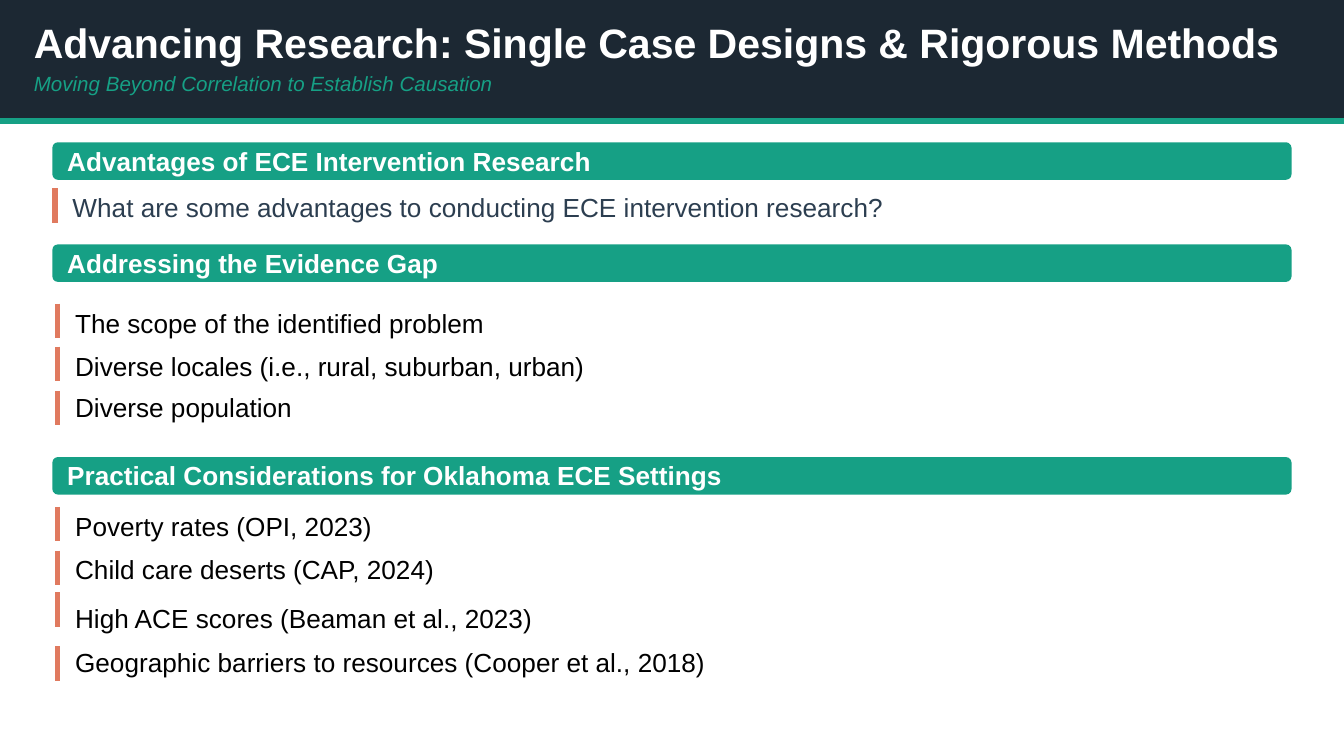
from dataclasses import dataclass

from lxml.etree import SubElement
from pptx import Presentation
from pptx.dml.color import RGBColor
from pptx.enum.shapes import MSO_CONNECTOR as Connector, MSO_SHAPE as Shape
from pptx.oxml.ns import qn
from pptx.util import Cm, Pt


@dataclass(frozen=True)
class Theme:
    font: str = "Arial"
    navy: str = "1C2833"
    green: str = "16A085"
    coral: str = "E07A5F"
    slate: str = "2C3E50"
    black: str = "000000"
    white: str = "FFFFFF"
    title_size: int = 22
    subtitle_size: int = 11
    body_size: int = 14
    line_width: int = 3


@dataclass(frozen=True)
class Item:
    """One marked line of text; positions are in centimetres."""
    text: str
    mark_top: float
    text_top: float
    color: str
    mark_left: float = 1.09


@dataclass(frozen=True)
class Section:
    heading: str
    top: float
    items: tuple[Item, ...]


THEME = Theme()
PAGE_WIDTH, PAGE_HEIGHT = 25.4, 14.29
HEADER_HEIGHT, RULE_TOP = 2.34, 2.29
BAR_LEFT, BAR_WIDTH, BAR_HEIGHT = 0.99, 23.42, 0.71
MARK_HEIGHT, MARK_GAP = 0.65, 0.33

SECTIONS = (
    Section("Advantages of ECE Intervention Research", 2.69, (
        Item("What are some advantages to conducting ECE intervention research?",
             3.56, 3.61, THEME.slate, mark_left=1.04),
    )),
    Section("Addressing the Evidence Gap", 4.62, (
        Item("The scope of the identified problem", 5.74, 5.82, THEME.black),
        Item("Diverse locales (i.e., rural, suburban, urban)", 6.55, 6.63, THEME.black),
        Item("Diverse population", 7.39, 7.39, THEME.black),
    )),
    Section("Practical Considerations for Oklahoma ECE Settings", 8.64, (
        Item("Poverty rates (OPI, 2023)", 9.58, 9.65, THEME.black),
        Item("Child care deserts (CAP, 2024)", 10.41, 10.46, THEME.black),
        Item("High ACE scores (Beaman et al., 2023)", 11.2, 11.38, THEME.black),
        Item("Geographic barriers to resources (Cooper et al., 2018)",
             12.22, 12.22, THEME.black),
    )),
)


def add_block(page, kind: Shape, left: float, top: float, width: float,
              height: float, color: str):
    block = page.shapes.add_shape(kind, Cm(left), Cm(top), Cm(width), Cm(height))
    block.shadow.inherit = False
    block.fill.solid()
    block.fill.fore_color.rgb = RGBColor.from_string(color)
    block.line.fill.background()
    return block


def add_line(page, left: float, top: float, right: float, bottom: float,
             color: str) -> None:
    line = page.shapes.add_connector(
        Connector.STRAIGHT, Cm(left), Cm(top), Cm(right), Cm(bottom))
    line.line.color.rgb = RGBColor.from_string(color)
    line.line.width = Pt(THEME.line_width)
    SubElement(line._element.spPr, qn("a:effectLst"))


def add_text(page, text: str, *, left: float, top: float, width: float,
             height: float, color: str, size: int = THEME.body_size,
             bold: bool = False, italic: bool = False,
             space_before: float = 0) -> None:
    box = page.shapes.add_textbox(Cm(left), Cm(top), Cm(width), Cm(height))
    frame = box.text_frame
    frame.word_wrap = True
    frame.margin_left = frame.margin_right = 0
    frame.margin_top = frame.margin_bottom = 0
    para = frame.paragraphs[0]
    para.space_before = Pt(space_before)
    span = para.add_run()
    span.text = text
    span.font.name = THEME.font
    span.font.size = Pt(size)
    span.font.bold = bold
    span.font.italic = italic
    span.font.color.rgb = RGBColor.from_string(color)


def add_header(page) -> None:
    add_block(page, Shape.RECTANGLE, 0, 0, PAGE_WIDTH, HEADER_HEIGHT, THEME.navy)
    add_line(page, 0, RULE_TOP, PAGE_WIDTH, RULE_TOP, THEME.green)
    add_text(page, "Advancing Research: Single Case Designs & Rigorous Methods",
             left=0.64, top=0.33, width=24.1, height=0.89,
             color=THEME.white, size=THEME.title_size, bold=True)
    add_text(page, "Moving Beyond Correlation to Establish Causation",
             left=0.64, top=1.35, width=24.1, height=0.43, color=THEME.green,
             size=THEME.subtitle_size, italic=True, space_before=2)


def add_item(page, item: Item) -> None:
    add_line(page, item.mark_left, item.mark_top,
             item.mark_left, item.mark_top + MARK_HEIGHT, THEME.coral)
    add_text(page, item.text, left=item.mark_left + MARK_GAP, top=item.text_top,
             width=23.22, height=0.38, color=item.color)


def add_section(page, section: Section) -> None:
    bar = add_block(page, Shape.ROUNDED_RECTANGLE, BAR_LEFT, section.top,
                    BAR_WIDTH, BAR_HEIGHT, THEME.green)
    bar.adjustments[0] = 0.15
    add_text(page, section.heading, left=1.27, top=section.top + 0.05,
             width=23.32, height=0.43, color=THEME.white, bold=True)
    for item in section.items:
        add_item(page, item)


def main() -> None:
    deck = Presentation()
    deck.slide_width, deck.slide_height = Cm(PAGE_WIDTH), Cm(PAGE_HEIGHT)
    page = deck.slides.add_slide(deck.slide_layouts[6])
    add_header(page)
    for section in SECTIONS:
        add_section(page, section)
    deck.save("out.pptx")


if __name__ == "__main__":
    main()
